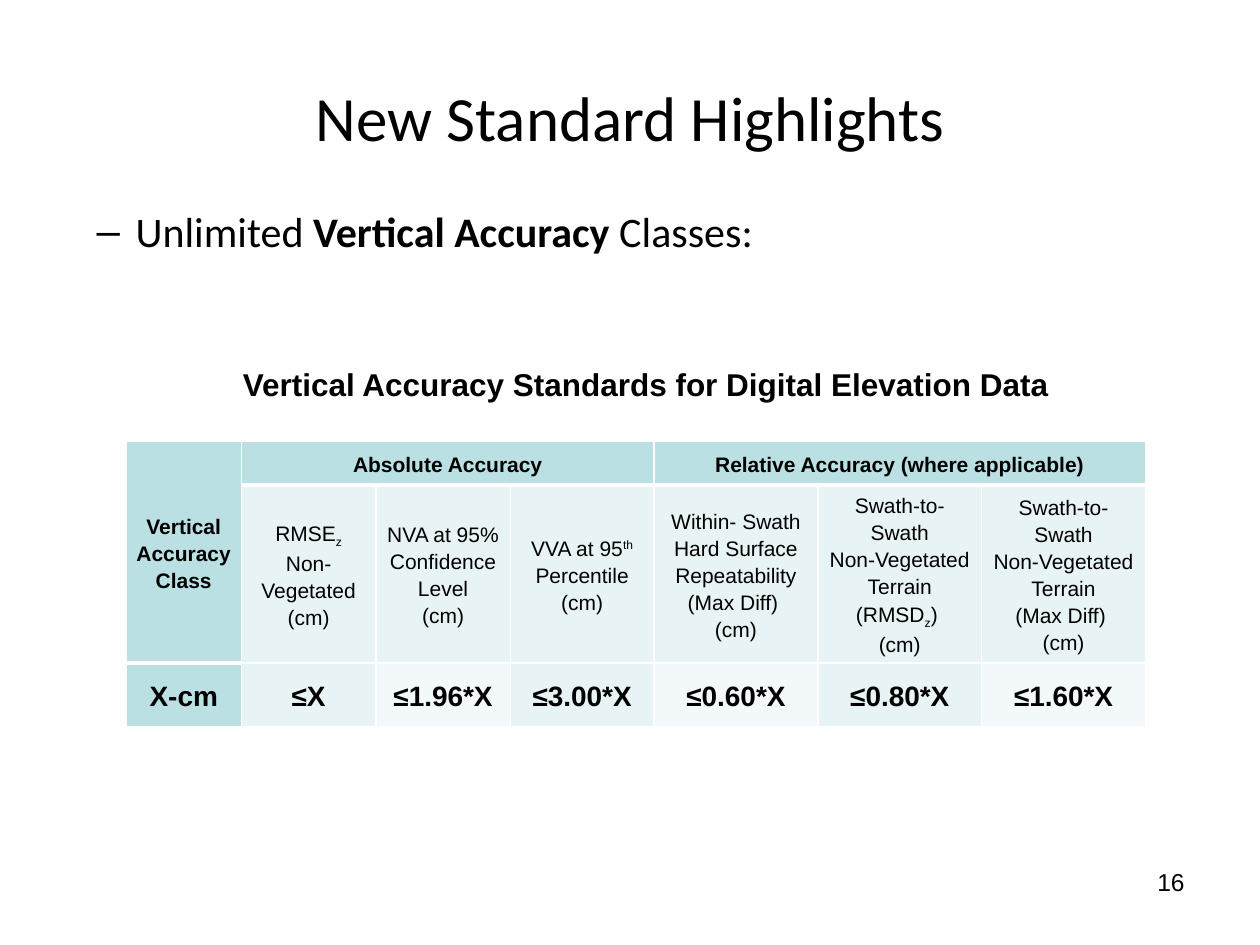
from dataclasses import dataclass

from lxml.etree import SubElement
from pptx import Presentation
from pptx.dml.color import RGBColor as RGB
from pptx.enum.text import MSO_ANCHOR as ANCHOR, PP_ALIGN as ALIGN
from pptx.oxml.ns import qn
from pptx.util import Inches, Pt


@dataclass(frozen=True)
class Theme:
    text: str = "000000"
    border: str = "FFFFFF"
    header: str = "BBE0E3"
    band: str = "E7F3F4"
    pale: str = "F3F9FA"
    heading_font: str = "Calibri"
    table_font: str = "Arial"
    title: int = 36
    body: int = 24
    caption: int = 18
    value: int = 16
    number: int = 14
    label: int = 12
    thin: int = 1
    thick: int = 3


BASELINES = {"sub": "-25000", "sup": "30000"}


def unit(n):
    """Length of n steps of the 120 by 90 slide grid."""
    return Inches(n / 12)


class SlideBuilder:
    def __init__(self, prs, theme):
        self.theme = theme
        self.slide = prs.slides.add_slide(prs.slide_layouts[1])

    def place(self, sp, box):
        sp.left, sp.top, sp.width, sp.height = map(unit, box)

    def fill_text(self, tf, paragraphs, size, font, align, bold=False, spacing=None):
        """Each paragraph is a string or a list of (text, style) runs."""
        for i, content in enumerate(paragraphs):
            p = tf.add_paragraph() if i else tf.paragraphs[0]
            p.alignment = align
            if spacing:
                p.line_spacing = spacing
            runs = [(content, "")] if isinstance(content, str) else content
            for text, style in runs:
                r = p.add_run()
                r.text = text
                r.font.size, r.font.name = Pt(size), font
                r.font.bold = bold or style == "bold"
                r.font.color.rgb = RGB.from_string(self.theme.text)
                if style in BASELINES:
                    r._r.get_or_add_rPr().set("baseline", BASELINES[style])

    def title(self, text, box):
        sp = self.slide.shapes.title
        self.place(sp, box)
        sp.text_frame.vertical_anchor = ANCHOR.MIDDLE
        self.fill_text(sp.text_frame, [text], self.theme.title,
                       self.theme.heading_font, ALIGN.CENTER)

    def dash_item(self, runs, box):
        sp = self.slide.placeholders[1]
        self.place(sp, box)
        p = sp.text_frame.paragraphs[0]
        p.level = 1
        pPr = p._p.get_or_add_pPr()
        pPr.set("marL", str(Inches(0.81)))
        pPr.set("indent", str(Inches(-0.31)))
        SubElement(pPr, qn("a:buChar")).set("char", "–")
        p.space_before = Pt(0)
        self.fill_text(sp.text_frame, [runs], self.theme.body,
                       self.theme.heading_font, ALIGN.LEFT)

    def text(self, text, box, size, align, anchor=ANCHOR.TOP, bold=False):
        sp = self.slide.shapes.add_textbox(*map(unit, box))
        tf = sp.text_frame
        tf.word_wrap = True
        tf.vertical_anchor = anchor
        self.fill_text(tf, [text], size, self.theme.table_font, align, bold)

    def table(self, left, top, cols, rows):
        table = self.slide.shapes.add_table(
            len(rows), len(cols), unit(left), unit(top),
            unit(sum(cols)), unit(sum(rows))).table
        table.first_row = table.horz_banding = False
        for column, width in zip(table.columns, cols):
            column.width = unit(width)
        for row, height in zip(table.rows, rows):
            row.height = unit(height)
        return table

    def cell(self, cell, paragraphs, fill, size, bold):
        cell.margin_left = cell.margin_right = Inches(0.07)
        cell.margin_top = cell.margin_bottom = 0
        cell.vertical_anchor = ANCHOR.MIDDLE
        self.fill_text(cell.text_frame, paragraphs, size, self.theme.table_font,
                       ALIGN.CENTER, bold, spacing=1.15)
        cell.fill.solid()
        cell.fill.fore_color.rgb = RGB.from_string(fill)

    def borders(self, cell, **widths):
        """Draw all four sides; widths overrides the thin line by side."""
        tcPr = cell._tc.get_or_add_tcPr()
        for i, side in enumerate(("lnL", "lnR", "lnT", "lnB")):
            ln = SubElement(tcPr, qn(f"a:{side}"))
            ln.set("w", str(Pt(widths.get(side, self.theme.thin))))
            fill = SubElement(ln, qn("a:solidFill"))
            SubElement(fill, qn("a:srgbClr")).set("val", self.theme.border)
            tcPr.insert(i, ln)


def accuracy_table(b):
    t = b.theme
    table = b.table(12, 42, [11, 12.8, 12.8, 13.7] + [15.6] * 3, [4.2, 13.8, 6.1])
    groups = [
        (0, 0, 1, 0, "Vertical Accuracy Class"),
        (0, 1, 0, 3, "Absolute Accuracy"),
        (0, 4, 0, 6, "Relative Accuracy (where applicable)"),
    ]
    for row, col, last_row, last_col, text in groups:
        table.cell(row, col).merge(table.cell(last_row, last_col))
        b.cell(table.cell(row, col), [text], t.header, t.label, True)

    measures = [
        [[("RMSE", ""), ("z", "sub")], "Non-Vegetated"],
        ["NVA at 95% Confidence Level"],
        [[("VVA at 95", ""), ("th", "sup"), (" Percentile", "")]],
        ["Within- Swath", "Hard Surface Repeatability", "(Max Diff) "],
        ["Swath-to-Swath", "Non-Vegetated Terrain",
         [("(RMSD", ""), ("z", "sub"), (") ", "")]],
        ["Swath-to-Swath", "Non-Vegetated Terrain", "(Max Diff) "],
    ]
    for col, lines in enumerate(measures, 1):
        b.cell(table.cell(1, col), lines + ["(cm)"], t.band, t.label, False)

    limits = ["X-cm", "≤X", "≤1.96*X", "≤3.00*X", "≤0.60*X", "≤0.80*X", "≤1.60*X"]
    for col, text in enumerate(limits):
        fill = (t.band if col % 2 else t.pale) if col else t.header
        b.cell(table.cell(2, col), [text], fill, t.value, True)

    for row in range(3):
        for col in range(7):
            header_end = 0 if col else 1
            widths = {}
            if row <= header_end:
                widths["lnB"] = t.thick
            elif row == header_end + 1:
                widths["lnT"] = t.thick
            b.borders(table.cell(row, col), **widths)


def main():
    prs = Presentation()
    prs.slide_width, prs.slide_height = unit(120), unit(90)
    theme = Theme()
    b = SlideBuilder(prs, theme)
    b.title("New Standard Highlights", (6, 3.6, 108, 15))
    b.dash_item([("Unlimited ", ""), ("Vertical Accuracy ", "bold"),
                 ("Classes:", "")], (2, 19, 115, 63))
    b.text("16", (86, 82, 28, 6.2), theme.number, ALIGN.RIGHT)
    accuracy_table(b)
    b.text("Vertical Accuracy Standards for Digital Elevation Data",
           (13, 34.2, 97, 4.8), theme.caption, ALIGN.CENTER, ANCHOR.MIDDLE, True)
    prs.save("out.pptx")


if __name__ == "__main__":
    main()
